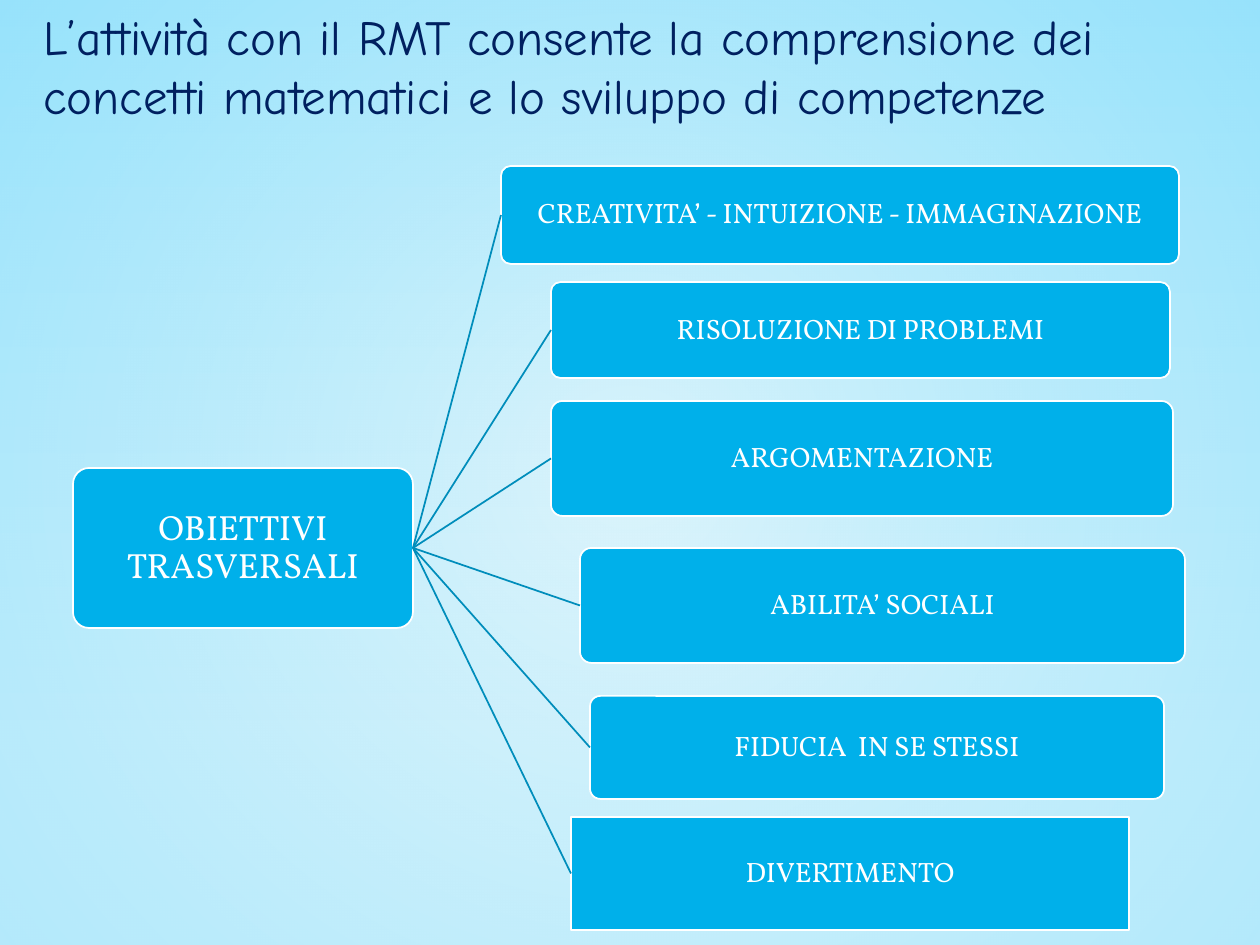
from lxml import etree
from pptx import Presentation
from pptx import util as u
from pptx.dml.color import RGBColor
from pptx.enum import shapes, text
from pptx.oxml.ns import qn

PX = 914400 / 126
COLORS = {"navy": "002060", "blue": "00B0EA", "line": "008DBB",
          "white": "FFFFFF", "pale": "C8F1FF", "sky": "91E4FF"}


def write_text(shape, content, size, font, color, align=text.PP_ALIGN.LEFT,
               anchor=text.MSO_ANCHOR.TOP, spacing=1.0, inset=None):
    frame = shape.text_frame
    frame.word_wrap = True
    frame.vertical_anchor = anchor
    if inset is not None:
        frame.margin_left = frame.margin_right = round(inset * PX)
        frame.margin_top = frame.margin_bottom = round(inset * PX)
    paragraph = frame.paragraphs[0]
    paragraph.alignment = align
    paragraph.line_spacing = spacing
    run = paragraph.add_run()
    run.text = content
    run.font.size = u.Pt(size)
    run.font.name = font
    run.font.color.rgb = RGBColor.from_string(COLORS[color])


def paint_gradient(fill, stops):
    fill.gradient()
    fill.gradient_angle = 270
    for stop, (position, color) in zip(fill.gradient_stops, stops):
        stop.position = position
        stop.color.rgb = RGBColor.from_string(COLORS[color])


presentation = Presentation()
presentation.slide_width = round(1260 * PX)
presentation.slide_height = round(945 * PX)
slide = presentation.slides.add_slide(presentation.slide_layouts[6])

# Background: vertical gradient, blue tint and radial glow
paint_gradient(slide.background.fill, [(0, "pale"), (0.79, "white")])
tint, glow = [
    slide.shapes.add_shape(shapes.MSO_SHAPE.RECTANGLE, 0, 0,
                           presentation.slide_width, presentation.slide_height)
    for _ in range(2)]
tint.fill.solid()
tint.fill.fore_color.rgb = RGBColor.from_string(COLORS["blue"])
paint_gradient(glow.fill, [(0, "white"), (1, "sky")])
linear = next(glow._element.iter(qn("a:lin")))
radial = etree.Element(qn("a:path"), path="circle")
etree.SubElement(radial, qn("a:fillToRect"), l="50000", t="50000", r="50000", b="50000")
linear.getparent().replace(linear, radial)
for layer, opacities in ((tint, [22]), (glow, [49, 35])):
    layer.shadow.inherit = False
    layer.line.fill.background()
    for color, opacity in zip(layer._element.spPr.iter(qn("a:srgbClr")), opacities):
        etree.SubElement(color, qn("a:alpha"), val=str(opacity * 1000))

# Title
title = slide.shapes.add_textbox(*(round(n * PX) for n in (31, 0, 1216, 131)))
write_text(title, "L’attività con il RMT consente la comprensione dei concetti "
           "matematici e lo sviluppo di competenze",
           size=28, font="Comic Neue", color="navy")

# Root box first, then its six goals: text, left, top, width, height
rounded = shapes.MSO_SHAPE.ROUNDED_RECTANGLE
boxes = [
    ("OBIETTIVI TRASVERSALI", 73, 468, 340, 160, 20, rounded),
    ("CREATIVITA’ - INTUIZIONE - IMMAGINAZIONE", 501, 166, 678, 98, 16, rounded),
    ("RISOLUZIONE DI PROBLEMI", 551, 282, 619, 96, 16, rounded),
    ("ARGOMENTAZIONE", 551, 401, 622, 115, 16, rounded),
    ("ABILITA’ SOCIALI", 580, 548, 605, 115, 16, rounded),
    ("FIDUCIA  IN SE STESSI", 590, 696, 574, 103, 16, rounded),
    ("DIVERTIMENTO", 571, 817, 558, 113, 16, shapes.MSO_SHAPE.RECTANGLE),
]
nodes = []
for label, left, top, width, height, size, kind in boxes:
    node = slide.shapes.add_shape(
        kind, *(round(n * PX) for n in (left, top, width, height)))
    if kind == rounded:
        node.adjustments[0] = 0.1
    node.shadow.inherit = False
    node.fill.solid()
    node.fill.fore_color.rgb = RGBColor.from_string(COLORS["blue"])
    node.line.color.rgb = RGBColor.from_string(COLORS["white"])
    node.line.width = u.Pt(1)
    write_text(node, label, size=size, font="Vollkorn", color="white",
               align=text.PP_ALIGN.CENTER, anchor=text.MSO_ANCHOR.MIDDLE,
               spacing=0.9, inset=1)
    nodes.append(node)

# Lines from the root to each goal
root, *goals = nodes
for goal in goals:
    connector = slide.shapes.add_connector(shapes.MSO_CONNECTOR.STRAIGHT, 0, 0, 0, 0)
    connector.begin_connect(root, 3)
    connector.end_connect(goal, 1)
    connector.line.color.rgb = RGBColor.from_string(COLORS["line"])
    connector.line.width = u.Pt(1)
    etree.SubElement(connector._element.spPr, qn("a:effectLst"))

presentation.save("out.pptx")
